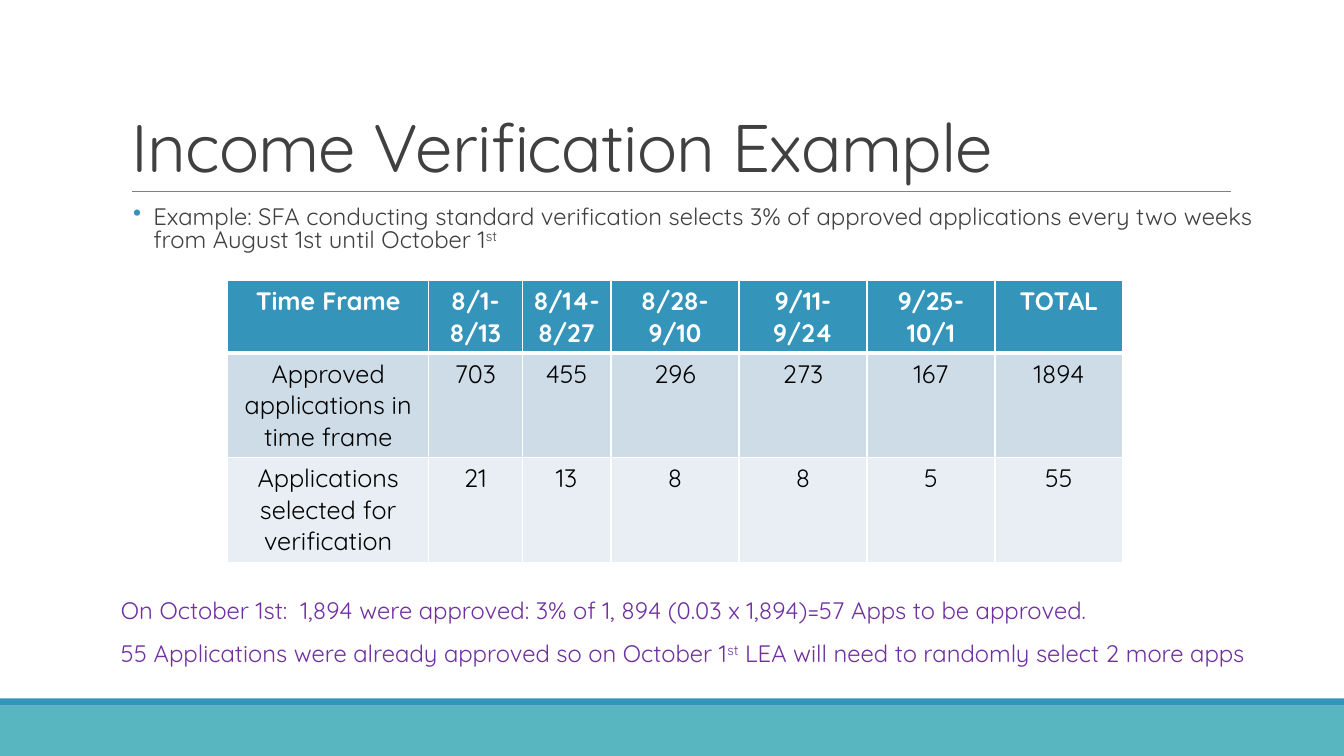
"""Build the income verification example slide."""
from lxml.etree import SubElement
from pptx import Presentation
from pptx.dml.color import RGBColor
from pptx.enum.shapes import MSO_CONNECTOR, MSO_SHAPE
from pptx.enum.text import MSO_ANCHOR, PP_ALIGN
from pptx.oxml.ns import qn
from pptx.util import Inches, Pt

FONT = "Quicksand"
BLUE, TEAL, GRAY, PURPLE, WHITE = "3494BA", "58B6C0", "404040", "7030A0", "FFFFFF"
TITLE = "Income Verification Example"
EXAMPLE = [("Example: SFA conducting standard verification selects 3% of approved "
            "applications every two weeks from August 1st until October 1", 0), ("st", 30)]
NOTES = [
    [("On October 1st:  1,894 were approved: 3% of 1, 894 (0.03 x 1,894)=57 Apps to be approved.", 0)],
    [("55 Applications were already approved so on October 1", 0), ("st", 30),
     (" LEA will need to randomly select 2 more apps", 0)],
]
ROWS = [
    ["Time Frame", "8/1-8/13", "8/14-8/27", "8/28-9/10", "9/11-9/24", "9/25-10/1", "TOTAL"],
    ["Approved applications in time frame", "703", "455", "296", "273", "167", "1894"],
    ["Applications selected for verification", "21", "13", "8", "8", "5", "55"],
]
ROW_FILLS = [BLUE, "CEDCE7", "E8EEF3"]
ROW_HEIGHTS = [0.72, 1.04, 1.04]
COLUMN_WIDTHS = [1.99, 0.93, 0.88] + [1.27] * 4
BANDS = [(7, 0.5, TEAL), (6.93, 0.07, BLUE)]
WIDTH, HEIGHT = 13.33, 7.5


def color(value):
    return RGBColor.from_string(value)


def write(paragraph, pieces, size=17, fill=GRAY, bold=False, align=None, line=None,
          before=0, after=0, left=0, hang=0, bullet=None, tracking=None):
    """Fill a paragraph with (text, superscript percent) pieces."""
    if align is not None:
        paragraph.alignment = align
    if line:
        paragraph.line_spacing = line
    paragraph.space_before, paragraph.space_after = Pt(before), Pt(after)
    properties = paragraph._p.get_or_add_pPr()
    properties.set("marL", str(Inches(left)))
    properties.set("indent", str(-Inches(hang)))
    if bullet:
        bullet_color = SubElement(properties, qn("a:buClr"))
        SubElement(bullet_color, qn("a:srgbClr"), val=BLUE)
        SubElement(properties, qn("a:buChar"), char=bullet)
    for text, raised in pieces:
        run = paragraph.add_run()
        run.text = text
        run.font.name, run.font.size, run.font.bold = FONT, Pt(size), bold
        run.font.color.rgb = color(fill)
        if raised:
            run._r.get_or_add_rPr().set("baseline", str(raised * 1000))
        if tracking:
            run._r.get_or_add_rPr().set("spc", str(int(tracking * 100)))


def add_text(slide, top, height, paragraphs, **style):
    frame = slide.shapes.add_textbox(Inches(1.1), Inches(top), Inches(11.62), Inches(height)).text_frame
    frame.word_wrap = True
    frame.margin_left = frame.margin_right = 0
    for index, pieces in enumerate(paragraphs):
        paragraph = frame.add_paragraph() if index else frame.paragraphs[0]
        write(paragraph, pieces, line=0.8, **style)


def add_borders(cell, widths):
    for side, width in zip("LRTB", widths):
        border = SubElement(cell._tc.get_or_add_tcPr(), qn(f"a:ln{side}"), w=str(Pt(width)))
        SubElement(SubElement(border, qn("a:solidFill")), qn("a:srgbClr"), val=WHITE)


def add_schedule(slide):
    table = slide.shapes.add_table(len(ROWS), len(COLUMN_WIDTHS), Inches(2.26), Inches(2.78),
                                   Inches(sum(COLUMN_WIDTHS)), Inches(sum(ROW_HEIGHTS))).table
    for column, width in zip(table.columns, COLUMN_WIDTHS):
        column.width = Inches(width)
    for r, (texts, fill, height) in enumerate(zip(ROWS, ROW_FILLS, ROW_HEIGHTS)):
        table.rows[r].height = Inches(height)
        for c, text in enumerate(texts):
            cell = table.cell(r, c)
            add_borders(cell, (1, 1, 3 if r == 1 else 1, 3 if r == 0 else 1))
            cell.fill.solid()
            cell.fill.fore_color.rgb = color(fill)
            write(cell.text_frame.paragraphs[0], [(text, 0)], size=18, bold=r == 0,
                  fill="000000" if r else WHITE, align=PP_ALIGN.CENTER)


def main():
    deck = Presentation()
    deck.slide_width, deck.slide_height = Inches(WIDTH), Inches(HEIGHT)
    slide = deck.slides.add_slide(deck.slide_layouts[5])
    for top, height, fill in BANDS:
        band = slide.shapes.add_shape(MSO_SHAPE.RECTANGLE, 0, Inches(top), Inches(WIDTH), Inches(height))
        band.shadow.inherit = False
        band.fill.solid()
        band.fill.fore_color.rgb = color(fill)
        band.line.fill.background()
    rule = slide.shapes.add_connector(MSO_CONNECTOR.STRAIGHT, Inches(1.31), Inches(1.9),
                                      Inches(12.21), Inches(1.9))
    rule.line.color.rgb, rule.line.width = color("808080"), Pt(0.5)
    SubElement(rule._element.spPr, qn("a:effectLst"))

    title = slide.shapes.title
    title.left, title.top, title.width, title.height = map(Inches, (1.2, 0.31, 11, 1.59))
    title.text_frame.vertical_anchor = MSO_ANCHOR.BOTTOM
    write(title.text_frame.paragraphs[0], [(TITLE, 0)], size=48, align=PP_ALIGN.LEFT,
          line=0.85, tracking=-0.5)
    add_text(slide, 2.01, 0.6, [EXAMPLE], before=2, after=4, left=0.42, hang=0.2, bullet="•")
    add_schedule(slide)
    add_text(slide, 5.92, 0.9, NOTES, fill=PURPLE, after=14, left=0.1)
    deck.save("out.pptx")


if __name__ == "__main__":
    main()
